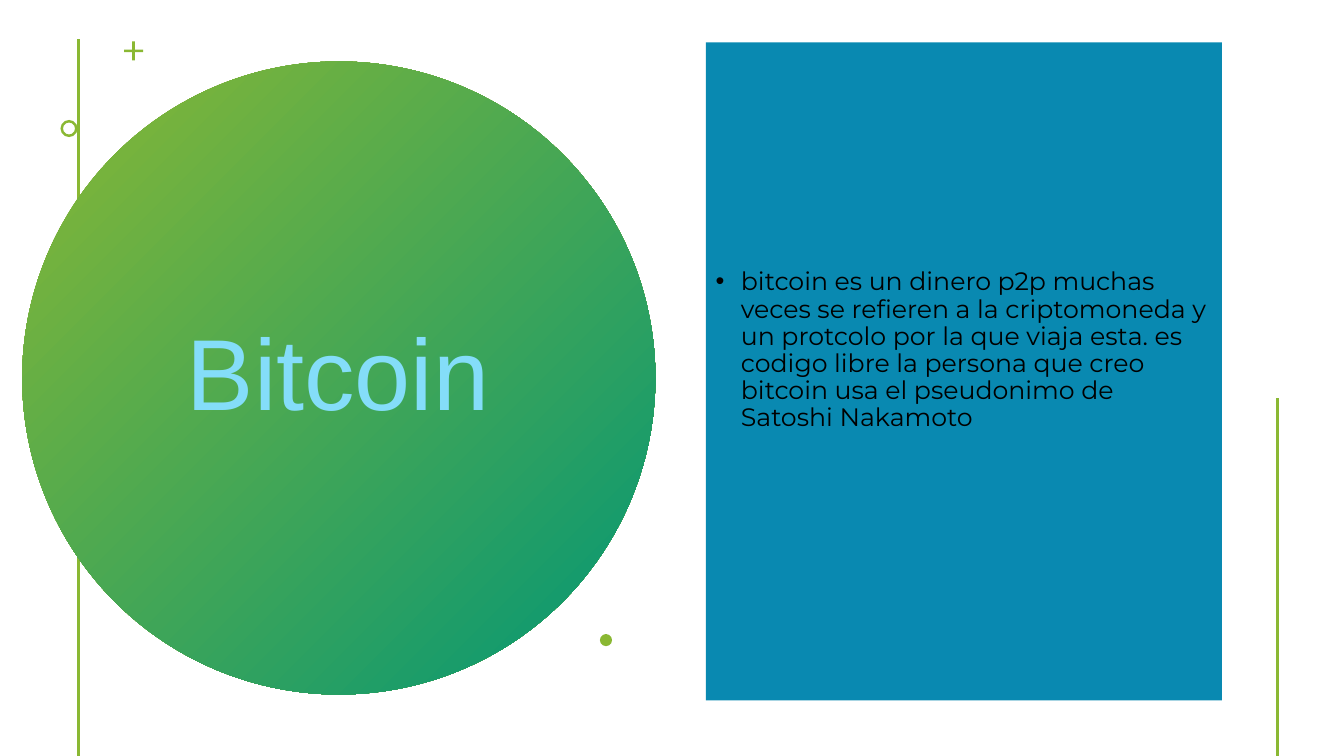
from lxml import etree
from pptx import Presentation
from pptx.dml.color import RGBColor
from pptx.enum.shapes import MSO_CONNECTOR, MSO_SHAPE
from pptx.enum.text import MSO_ANCHOR, PP_ALIGN
from pptx.oxml.ns import qn
from pptx.util import Inches, Pt

OVAL, RECTANGLE = MSO_SHAPE.OVAL, MSO_SHAPE.RECTANGLE
CROSS, DONUT = MSO_SHAPE.CROSS, MSO_SHAPE.DONUT
STRAIGHT = MSO_CONNECTOR.STRAIGHT
MIDDLE, LEFT, CENTER = MSO_ANCHOR.MIDDLE, PP_ALIGN.LEFT, PP_ALIGN.CENTER

GREEN, TEAL, BLUE = "8AB833", "029676", "0989B1"
SKY, BLACK = "84DDF9", "000000"

TITLE = ("Bitcoin", 72, "Arial", SKY)
DEFINITION = (
    "bitcoin es un dinero p2p muchas veces se refieren a la criptomoneda y "
    "un protcolo por la que viaja esta. es codigo libre la persona que creo "
    "bitcoin usa el pseudonimo de Satoshi Nakamoto",
    18, "Montserrat", BLACK,
)
LEFT_RULE = (0.78, 0.39)
RIGHT_RULE = (12.67, 3.95)
RULE_END = 7.5
ORNAMENTS = [
    (CROSS, 1.23, 0.41, 0.19, 0.43),
    (DONUT, 0.6, 1.19, 0.17, 0.15),
    (OVAL, 5.95, 6.29, 0.12, None),
]


def rgb(color):
    return RGBColor.from_string(color)


def add_rule(x, top):
    rule = slide.shapes.add_connector(
        STRAIGHT, Inches(x), Inches(top), Inches(x), Inches(RULE_END))
    rule.line.color.rgb = rgb(GREEN)
    rule.line.width = Pt(2)
    etree.SubElement(rule._element.spPr, qn("a:effectLst"))


def add_block(kind, x, y, width, height, color):
    block = slide.shapes.add_shape(
        kind, Inches(x), Inches(y), Inches(width), Inches(height))
    block.shadow.inherit = False
    block.line.fill.background()
    block.fill.solid()
    block.fill.fore_color.rgb = rgb(color)
    return block


def write(frame, content, align):
    text, size, font, color = content
    frame.word_wrap = True
    frame.vertical_anchor = MIDDLE
    paragraph = frame.paragraphs[0]
    paragraph.alignment = align
    paragraph.line_spacing = 0.9
    run = paragraph.add_run()
    run.text = text
    run.font.size = Pt(size)
    run.font.name = font
    run.font.color.rgb = rgb(color)
    return paragraph


def add_bullet(paragraph):
    properties = paragraph._p.get_or_add_pPr()
    properties.set("marL", str(Inches(0.25)))
    properties.set("indent", str(-Inches(0.25)))
    etree.SubElement(properties, qn("a:buFont"), typeface="Arial")
    etree.SubElement(properties, qn("a:buChar"), char="•")


deck = Presentation()
deck.slide_width, deck.slide_height = Inches(13.33), Inches(7.5)
slide = deck.slides.add_slide(deck.slide_layouts[6])

add_rule(*LEFT_RULE)

disc = add_block(OVAL, 0.22, 0.61, 6.28, 6.28, GREEN)
disc.fill.gradient()
disc.fill.gradient_angle = 315
for stop, color, position in zip(disc.fill.gradient_stops, (GREEN, TEAL), (0, 1)):
    stop.color.rgb = rgb(color)
    stop.position = position

title = slide.shapes.add_textbox(Inches(1.36), Inches(1.41), Inches(3.99), Inches(4.67))
write(title.text_frame, TITLE, CENTER)

for kind, x, y, size, adjustment in ORNAMENTS:
    ornament = add_block(kind, x, y, size, size, GREEN)
    if adjustment is not None:
        ornament.adjustments[0] = adjustment

panel = add_block(RECTANGLE, 7, 0.42, 5.12, 6.53, BLUE)
panel.text_frame.margin_bottom = Inches(0.46)
definition = write(panel.text_frame, DEFINITION, LEFT)
definition.space_before = Pt(10)
add_bullet(definition)

add_rule(*RIGHT_RULE)

deck.save("out.pptx")
